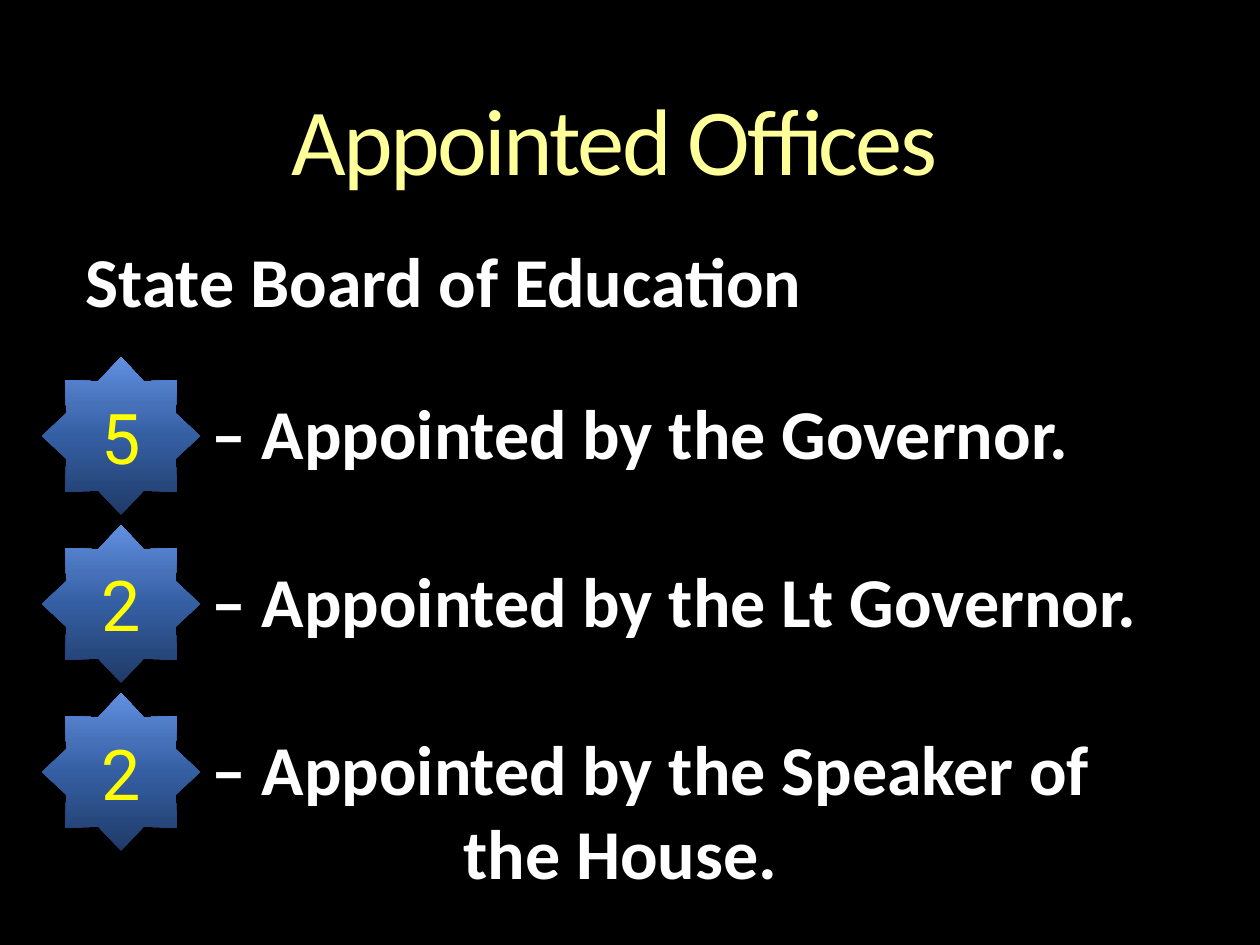
from lxml import etree
from pptx import Presentation
from pptx.dml.color import RGBColor
from pptx.enum.shapes import MSO_SHAPE
from pptx.enum.text import MSO_ANCHOR, PP_ALIGN
from pptx.oxml.ns import qn
from pptx.util import Inches, Pt

STAR = MSO_SHAPE.STAR_8_POINT
CENTER = PP_ALIGN.CENTER
TOP, MIDDLE = MSO_ANCHOR.TOP, MSO_ANCHOR.MIDDLE
PX_PER_INCH = 126
TITLE_ONLY = 5

STAR_STOPS = [(0, "1F3A67"), (50, "355FA3"), (70, "4772BA"), (100, "6190E1")]
STAR_TOP, STAR_PITCH = 357, 168
APPOINTMENTS = [
    ("5", "– Appointed by the Governor.", 39),
    ("2", "– Appointed by the Lt Governor.", 48),
    ("2", "– Appointed by the Speaker of the House.", 48),
]


def px(length):
    return Inches(length / PX_PER_INCH)


def color(hex_string):
    return RGBColor.from_string(hex_string)


def format_runs(paragraph, font_name, size, hex_string, bold=False):
    for run in paragraph.runs:
        run.font.name = font_name
        run.font.size = Pt(size)
        run.font.bold = bold
        run.font.color.rgb = color(hex_string)


def set_gradient(shape, stops):
    """Fill the shape from bottom to top with (percent, colour) stops."""
    shape.fill.gradient()
    shape.fill.gradient_angle = 90
    stop_list = shape._element.spPr.find(qn("a:gradFill")).find(qn("a:gsLst"))
    for stop in list(stop_list):
        stop_list.remove(stop)
    for percent, hex_string in stops:
        stop = etree.SubElement(stop_list, qn("a:gs"), pos=str(percent * 1000))
        etree.SubElement(stop, qn("a:srgbClr"), val=hex_string)


def set_title(slide, text):
    title = slide.shapes.title
    title.left, title.top, title.width, title.height = px(63), px(94), px(1102), px(105)
    frame = title.text_frame
    frame.text = text
    frame.margin_left = frame.margin_top = frame.margin_right = frame.margin_bottom = 0
    frame.vertical_anchor = TOP
    paragraph = frame.paragraphs[0]
    paragraph.alignment = CENTER
    paragraph.line_spacing = 0.9
    format_runs(paragraph, "Calibri", 54, "FFFF99")
    for run in paragraph.runs:
        run._r.get_or_add_rPr().set("spc", "-150")


def add_body(slide, heading):
    box = slide.shapes.add_textbox(px(73), px(231), px(1092), px(674))
    frame = box.text_frame
    frame.word_wrap = True
    frame.text = heading
    for _, text, space_before in APPOINTMENTS:
        paragraph = frame.add_paragraph()
        paragraph.text = text
        paragraph.space_before = Pt(space_before)
        properties = paragraph._p.get_or_add_pPr()
        properties.set("marL", str(Inches(3)))
        properties.set("indent", str(Inches(-2)))
    for paragraph in frame.paragraphs:
        paragraph.line_spacing = Pt(48)
        format_runs(paragraph, "Calibri", 40, "FFFFFF", bold=True)


def add_star(slide, top, number):
    star = slide.shapes.add_shape(STAR, px(42), px(top), px(158), px(158))
    star.shadow.inherit = False
    star.line.fill.background()
    set_gradient(star, STAR_STOPS)
    frame = star.text_frame
    frame.text = number
    frame.vertical_anchor = MIDDLE
    paragraph = frame.paragraphs[0]
    paragraph.alignment = CENTER
    format_runs(paragraph, "Roboto", 40, "FFFF00")


def main():
    presentation = Presentation()
    presentation.slide_width, presentation.slide_height = Inches(10), Inches(7.5)
    slide = presentation.slides.add_slide(presentation.slide_layouts[TITLE_ONLY])
    slide.background.fill.solid()
    slide.background.fill.fore_color.rgb = color("000000")
    set_title(slide, "Appointed Offices")
    add_body(slide, "State Board of Education")
    for index, (number, _, _) in enumerate(APPOINTMENTS):
        add_star(slide, STAR_TOP + index * STAR_PITCH, number)
    presentation.save("out.pptx")


if __name__ == "__main__":
    main()
